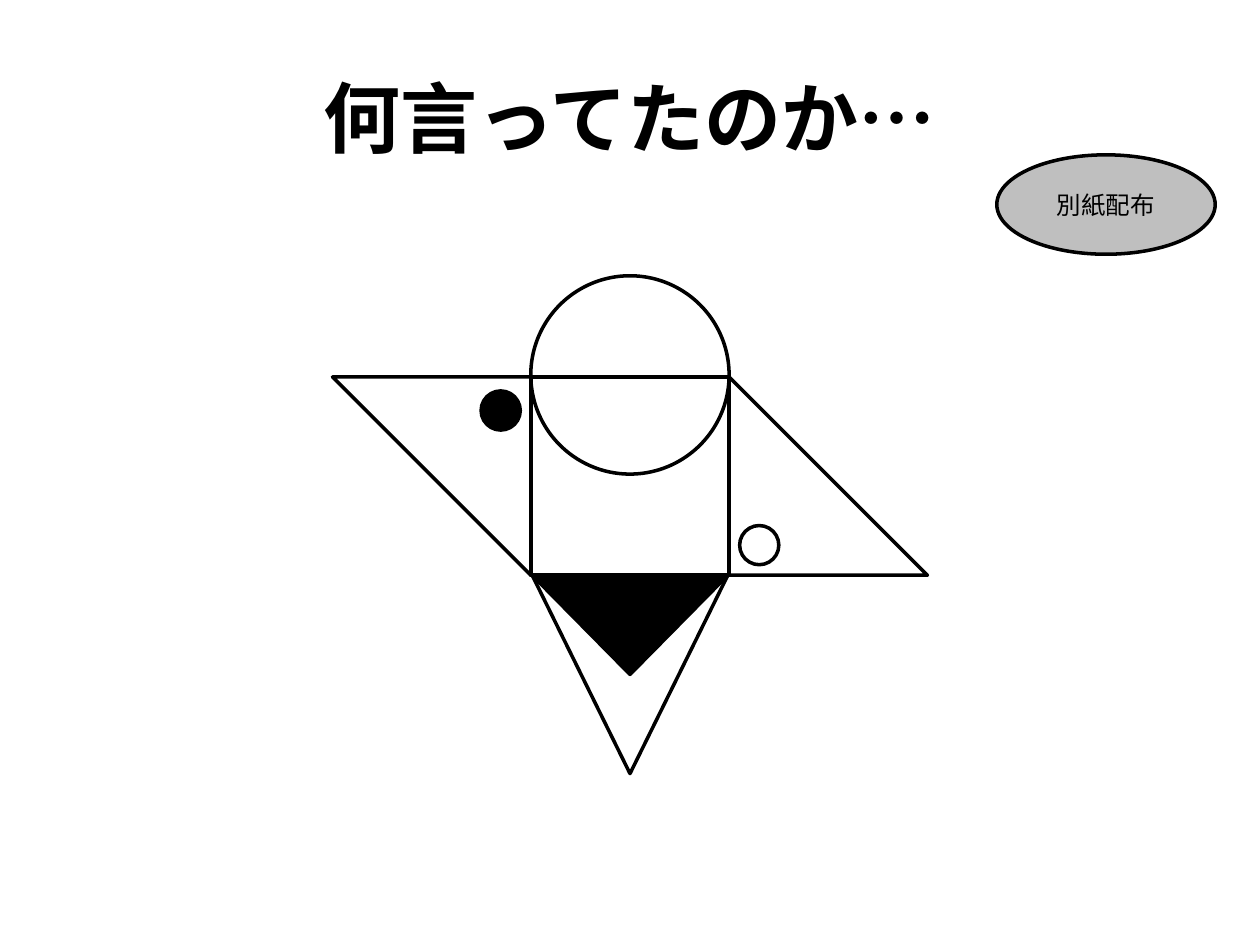
import pptx
import pptx.dml.color
import pptx.enum.shapes
import pptx.enum.text
import pptx.oxml.ns
import pptx.util
import lxml.etree

Pt = pptx.util.Pt
SHAPES = pptx.enum.shapes.MSO_SHAPE
FONT = "Noto Sans CJK JP"
COLOURS = {"ink": "000000", "badge": "BFBFBF"}


def colour(name):
    return pptx.dml.color.RGBColor.from_string(COLOURS[name])


def write_text(shape, text, font_format):
    frame = shape.text_frame
    frame.word_wrap = True
    frame.vertical_anchor = pptx.enum.text.MSO_ANCHOR.MIDDLE
    paragraph = frame.paragraphs[0]
    paragraph.alignment = pptx.enum.text.PP_ALIGN.CENTER
    run = paragraph.add_run()
    run.text = text
    for attribute, value in font_format.items():
        setattr(run.font, attribute, value)
    run.font.color.rgb = colour("ink")
    east_asian = lxml.etree.SubElement(
        run.font._element, pptx.oxml.ns.qn("a:ea"))
    east_asian.set("typeface", FONT)


def add_outlined(slide, kind, left, top, width, height, fill=None, rotation=0):
    shape = slide.shapes.add_shape(
        kind, Pt(left), Pt(top), Pt(width), Pt(height))
    shape.shadow.inherit = False
    shape.rotation = rotation
    if fill:
        shape.fill.solid()
        shape.fill.fore_color.rgb = colour(fill)
    else:
        shape.fill.background()
    shape.line.color.rgb = colour("ink")
    shape.line.width = Pt(2)
    return shape


def place_title(slide, left, top, width, height):
    title = slide.shapes.title
    box = {"left": left, "top": top, "width": width, "height": height}
    for attribute, value in box.items():
        setattr(title, attribute, Pt(value))
    write_text(title, "何言ってたのか…",
               {"size": Pt(44), "bold": True, "name": FONT})


def draw_figure(slide, left, top, width):
    side = width / 3
    square_left = left + side
    square_right = square_left + side
    square_top = top + 0.51 * side
    square_bottom = square_top + side
    dot = 22.4
    gap = 6
    inset = 0.8
    beak_left = square_left + inset
    beak_width = side - 2 * inset

    add_outlined(slide, SHAPES.RECTANGLE, square_left, square_top, side, side)
    for wing_left, rotation in ((square_right, 0), (left, 180)):
        add_outlined(slide, SHAPES.RIGHT_TRIANGLE, wing_left, square_top,
                     side, side, rotation=rotation)
    add_outlined(slide, SHAPES.OVAL, square_left, top, side, side)
    add_outlined(slide, SHAPES.ISOSCELES_TRIANGLE, beak_left, square_bottom,
                 beak_width, side, rotation=180)
    add_outlined(slide, SHAPES.OVAL, square_left - gap - dot,
                 square_top + 8, dot, dot, fill="ink")
    add_outlined(slide, SHAPES.OVAL, square_right + gap,
                 square_bottom - gap - dot, dot, dot)
    add_outlined(slide, SHAPES.ISOSCELES_TRIANGLE, beak_left, square_bottom,
                 beak_width, side / 2, fill="ink", rotation=180)


def draw_badge(slide, left, top, width, height):
    badge = add_outlined(slide, SHAPES.OVAL, left, top, width, height,
                         fill="badge")
    write_text(badge, "別紙配布", {"size": Pt(14), "name": FONT})


def main():
    presentation = pptx.Presentation()
    presentation.slide_width = Pt(720)
    presentation.slide_height = Pt(540)
    slide = presentation.slides.add_slide(presentation.slide_layouts[5])
    place_title(slide, 36, 21.6, 648, 90)
    draw_figure(slide, 190, 157.6, 340)
    draw_badge(slide, 569.6, 88.5, 124.8, 56.8)
    presentation.save("out.pptx")


if __name__ == "__main__":
    main()
